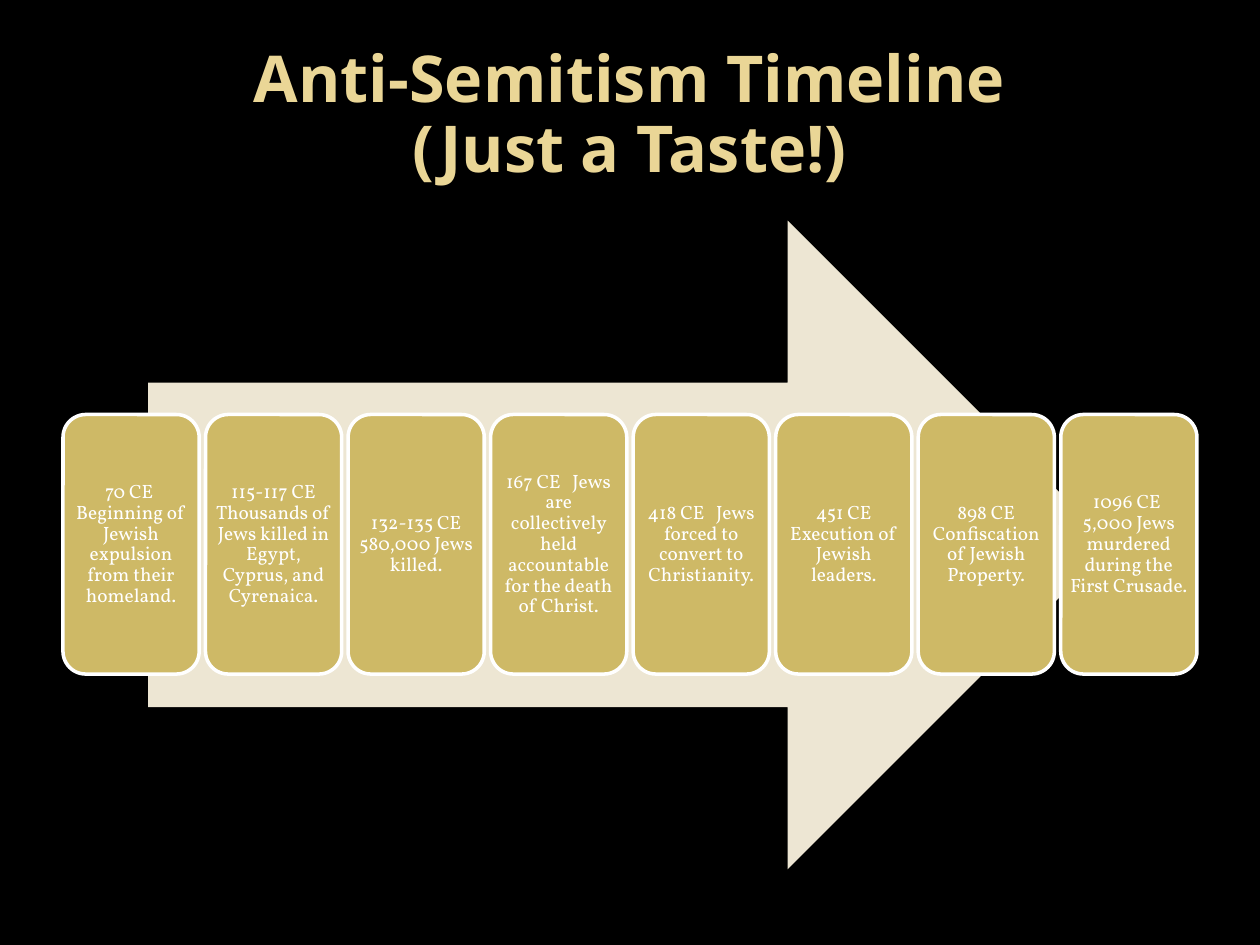
from dataclasses import dataclass

from pptx import Presentation
from pptx.dml.color import RGBColor
from pptx.enum import shapes, text
from pptx.util import Pt


@dataclass(frozen=True)
class Theme:
    back: str = "000000"
    title: str = "EAD696"
    arrow: str = "EDE6D3"
    card: str = "CEB966"
    light: str = "FFFFFF"
    head_font: str = "Open Sans"
    body_font: str = "Vollkorn"
    head_size: float = 36.9
    body_size: float = 11


THEME = Theme()

TITLE = ["Anti-Semitism Timeline", "(Just a Taste!)"]
EVENTS = [
    "70 CE  Beginning of Jewish expulsion from their homeland.",
    "115-117 CE Thousands of Jews killed in Egypt, Cyprus, and Cyrenaica.",
    "132-135 CE 580,000 Jews killed.",
    "167 CE   Jews are collectively held accountable for the death of Christ.",
    "418 CE   Jews forced to convert to Christianity.",
    "451 CE Execution of Jewish leaders.",
    "898 CE Confiscation of Jewish Property.",
    "1096 CE  5,000 Jews murdered during the First Crusade.",
]

# Card row, in points
LEFT, TOP, WIDTH, HEIGHT = 36, 236.9, 77.8, 148.3
STEP = 81.45


def color(code):
    return RGBColor.from_string(code)


def add_run(para, words, font, size, code, bold=False):
    run = para.add_run()
    run.text = words
    run.font.name = font
    run.font.size = Pt(size)
    run.font.bold = bold
    run.font.color.rgb = color(code)


def set_frame(frame):
    """Centre the text both ways and return the first paragraph."""
    frame.word_wrap = True
    frame.auto_size = text.MSO_AUTO_SIZE.NONE
    frame.vertical_anchor = text.MSO_ANCHOR.MIDDLE
    para = frame.paragraphs[0]
    para.alignment = text.PP_ALIGN.CENTER
    para.line_spacing = 0.9
    return para


def add_title(slide, lines):
    title = slide.shapes.title
    title.left, title.top, title.width, title.height = Pt(36), Pt(21.6), Pt(648), Pt(90)
    para = set_frame(title.text_frame)
    for i, line in enumerate(lines):
        if i:
            para.add_line_break()
        add_run(para, line, THEME.head_font, THEME.head_size, THEME.title, True)


def add_block(slide, kind, box, fill):
    block = slide.shapes.add_shape(kind, *map(Pt, box))
    block.shadow.inherit = False
    block.fill.solid()
    block.fill.fore_color.rgb = color(fill)
    block.line.fill.background()
    return block


def add_card(slide, left, words):
    card = add_block(slide, shapes.MSO_SHAPE.ROUNDED_RECTANGLE,
                     (left, TOP, WIDTH, HEIGHT), THEME.card)
    card.line.color.rgb = color(THEME.light)
    card.line.width = Pt(2)
    frame = card.text_frame
    # The rounded corners already inset the text
    frame.margin_left = frame.margin_right = 0
    frame.margin_top = frame.margin_bottom = 0
    add_run(set_frame(frame), words, THEME.body_font, THEME.body_size, THEME.light)


def main():
    deck = Presentation()
    deck.slide_width, deck.slide_height = Pt(720), Pt(540)
    slide = deck.slides.add_slide(deck.slide_layouts.get_by_name("Title Only"))

    # Background and title
    slide.background.fill.solid()
    slide.background.fill.fore_color.rgb = color(THEME.back)
    add_title(slide, TITLE)

    # Timeline arrow behind the cards
    add_block(slide, shapes.MSO_SHAPE.RIGHT_ARROW, (84.6, 126, 550.8, 370.8), THEME.arrow)

    # One card for each event
    for i, event in enumerate(EVENTS):
        add_card(slide, LEFT + i * STEP, event)

    deck.save("out.pptx")


if __name__ == "__main__":
    main()
